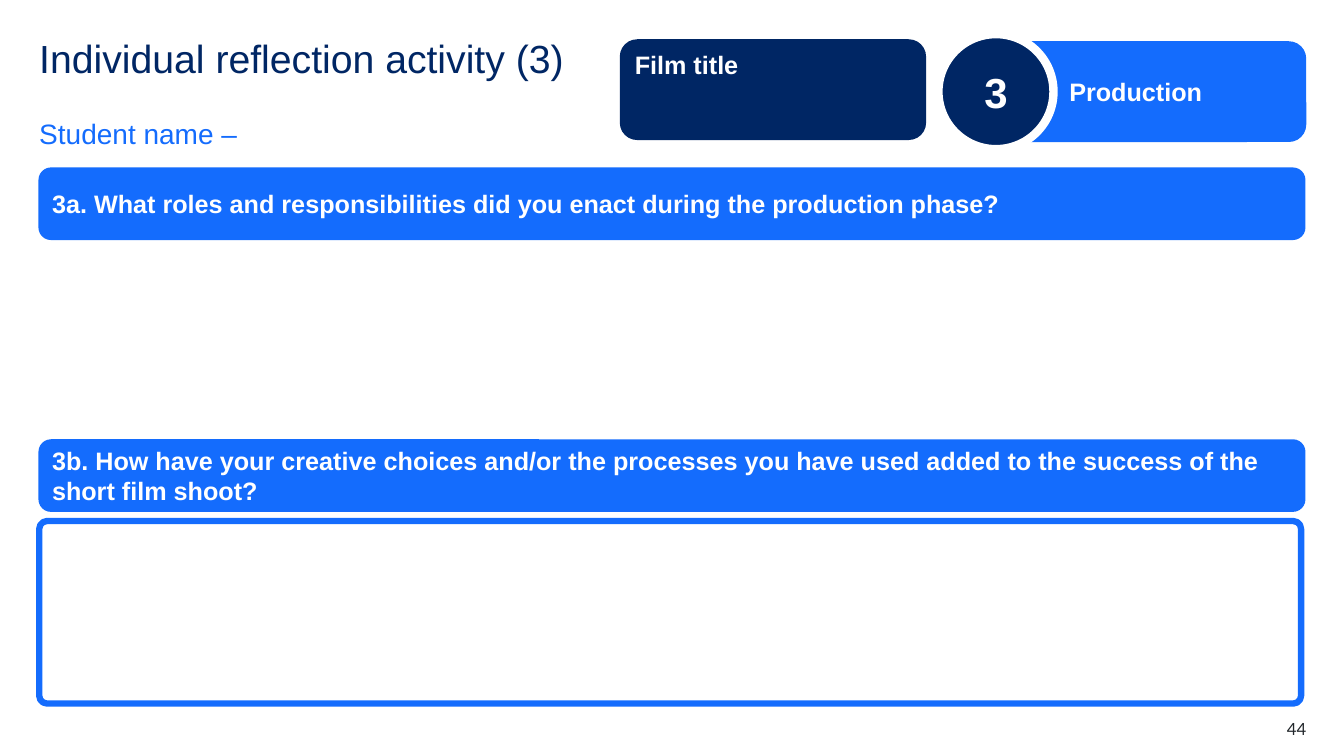
from pptx import Presentation
from pptx.dml.color import RGBColor
from pptx.enum.shapes import MSO_SHAPE as Shape
from pptx.enum.text import MSO_ANCHOR as Anchor, PP_ALIGN as Align
from pptx.util import Cm, Pt

COLOURS = {"navy": "002664", "blue": "146CFD", "white": "FFFFFF", "ink": "22272B"}

TITLE = "Individual reflection activity (3)"
STUDENT = "Student name –"
FILM = "Film title"
PHASE_NUMBER, PHASE_NAME = "3", "Production"
QUESTIONS = [
    "3a. What roles and responsibilities did you enact during the production phase?",
    "3b. How have your creative choices and/or the processes you have used "
    "added to the success of the short film shoot?",
]
PAGE_NUMBER = "44"

LEFT = 0.99
BAR_LEFT, BAR_TOP, BAR_WIDTH, BAR_HEIGHT = 0.97, 4.22, 31.93, 1.83
QUESTION_PITCH = 6.85
CORNER = 0.173


def colour(name):
    return RGBColor.from_string(COLOURS[name])


def write(shape, text, size, ink="white", bold=False, font="Arial",
          align=Align.LEFT, anchor=Anchor.MIDDLE):
    frame = shape.text_frame
    frame.word_wrap = True
    frame.vertical_anchor = anchor
    paragraph = frame.paragraphs[0]
    paragraph.alignment = align
    run = paragraph.add_run()
    run.text = text
    run.font.size = Pt(size)
    run.font.name = font
    run.font.bold = bold
    run.font.color.rgb = colour(ink)
    return paragraph


def add_label(shapes, box, text, size, ink, **style):
    label = shapes.add_textbox(*map(Cm, box))
    frame = label.text_frame
    frame.margin_left = frame.margin_right = frame.margin_top = frame.margin_bottom = 0
    return write(label, text, size, ink, **style)


def add_panel(shapes, box, fill, corner=CORNER, kind=Shape.ROUNDED_RECTANGLE,
              line=None, line_width=0):
    panel = shapes.add_shape(kind, *map(Cm, box))
    panel.shadow.inherit = False
    panel.fill.solid()
    panel.fill.fore_color.rgb = colour(fill)
    if kind == Shape.ROUNDED_RECTANGLE:
        panel.adjustments[0] = corner
    if line:
        panel.line.color.rgb = colour(line)
        panel.line.width = Pt(line_width)
    else:
        panel.line.fill.background()
    return panel


def main():
    presentation = Presentation()
    presentation.slide_width, presentation.slide_height = Cm(33.87), Cm(19.05)
    slide = presentation.slides.add_slide(presentation.slide_layouts[6])
    shapes = slide.shapes

    title = add_label(shapes, (LEFT, 0.99, 14.3, 1.52), TITLE, 28, "navy", anchor=Anchor.TOP)
    title.line_spacing = 0.9
    student = add_label(shapes, (LEFT, 2.72, 14.3, 0.86), STUDENT, 20, "blue")
    student.line_spacing = 1.5
    student.space_after = Pt(12)

    film = add_panel(shapes, (15.62, 0.99, 7.72, 2.54), "navy")
    write(film, FILM, 18, bold=True, anchor=Anchor.TOP)

    phase = shapes.add_group_shape()
    name_panel = add_panel(phase.shapes, (25.55, 1.04, 7.37, 2.54), "blue")
    write(name_panel, PHASE_NAME, 18, bold=True)
    name_panel.text_frame.margin_left = Cm(1.27)
    badge = add_panel(phase.shapes, (23.65, 0.86, 2.9, 2.9), "navy", kind=Shape.OVAL,
                      line="white", line_width=6)
    write(badge, PHASE_NUMBER, 30, bold=True, align=Align.CENTER)

    for index, question in enumerate(QUESTIONS):
        top = BAR_TOP + index * QUESTION_PITCH
        bar = add_panel(shapes, (BAR_LEFT, top, BAR_WIDTH, BAR_HEIGHT), "blue")
        write(bar, question, 18, bold=True)

    add_panel(shapes, (LEFT, 13.13, 31.8, 4.6), "white", corner=0.043,
              line="blue", line_width=4.5)
    add_label(shapes, (30.91, 18.11, 2.01, 0.51), PAGE_NUMBER, 12, "ink",
              font="Lato", align=Align.RIGHT, anchor=Anchor.TOP)

    presentation.save("out.pptx")


if __name__ == "__main__":
    main()
